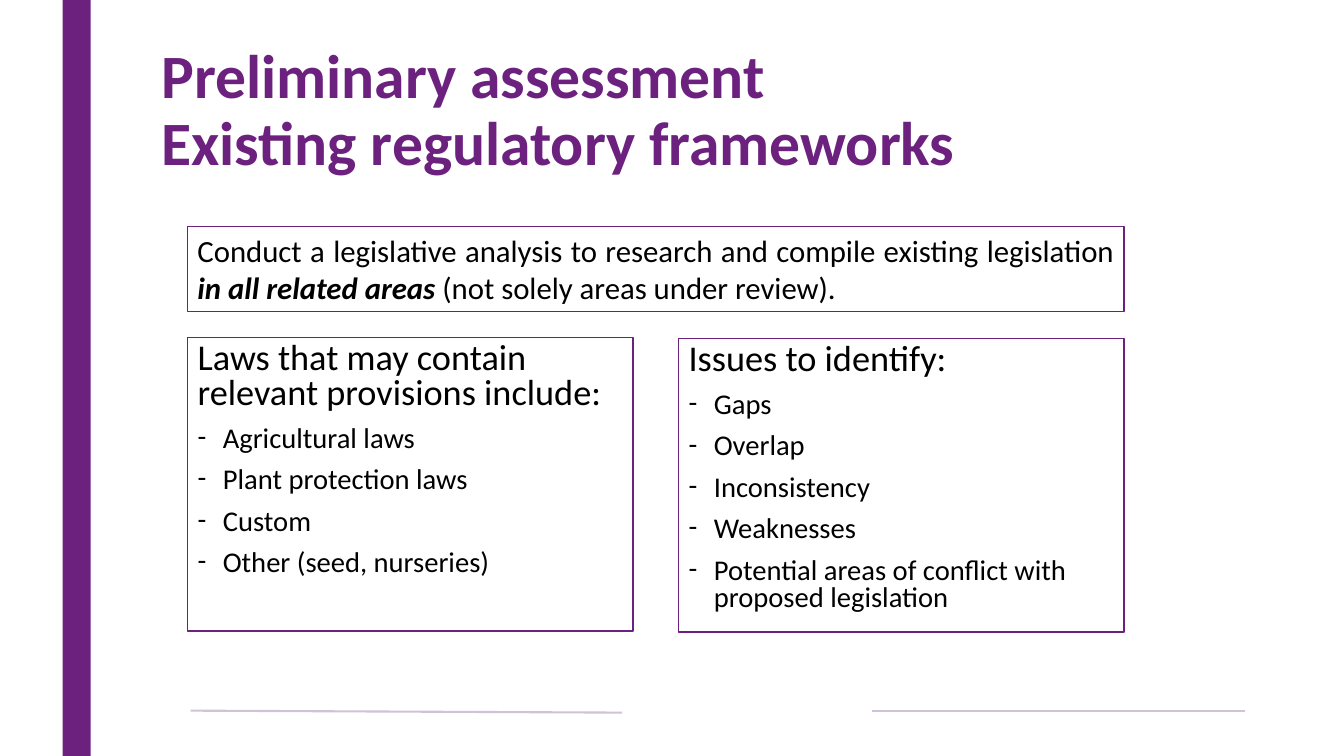
from lxml import etree
from pptx import Presentation
from pptx.dml.color import RGBColor
from pptx.enum.shapes import MSO_CONNECTOR, MSO_SHAPE
from pptx.enum.text import MSO_ANCHOR, MSO_AUTO_SIZE, PP_ALIGN
from pptx.oxml.ns import qn
from pptx.util import Inches, Pt

STRAIGHT = MSO_CONNECTOR.STRAIGHT
RECTANGLE = MSO_SHAPE.RECTANGLE
TOP = MSO_ANCHOR.TOP
NO_FIT = MSO_AUTO_SIZE.NONE
LEFT, JUSTIFY = PP_ALIGN.LEFT, PP_ALIGN.JUSTIFY

PURPLE = RGBColor(0x6C, 0x21, 0x7F)
LILAC = RGBColor(0xCF, 0xC2, 0xD9)
WHITE = RGBColor(0xFF, 0xFF, 0xFF)
BLACK = RGBColor(0x00, 0x00, 0x00)
FONT = "Calibri"

TWO_CONTENT_LAYOUT = 3
LAWS = [
    "Laws that may contain relevant provisions include:",
    "Agricultural laws",
    "Plant protection laws",
    "Custom",
    "Other (seed, nurseries)",
]
ISSUES = [
    "Issues to identify:",
    "Gaps",
    "Overlap",
    "Inconsistency",
    "Weaknesses",
    "Potential areas of conflict with proposed legislation",
]
ANALYSIS = [
    ("Conduct a legislative analysis to research and compile existing legislation ", False),
    ("in all related areas ", True),
    ("(not solely areas under review).", False),
]


def place(shape, left, top, width, height):
    shape.left, shape.top = Inches(left), Inches(top)
    shape.width, shape.height = Inches(width), Inches(height)


def style_font(font, size, color, bold=False):
    font.name = FONT
    font.size = Pt(size)
    font.bold = bold
    font.color.rgb = color


def style_frame(box):
    box.fill.solid()
    box.fill.fore_color.rgb = WHITE
    box.line.color.rgb = PURPLE
    box.line.width = Pt(1)
    frame = box.text_frame
    frame.word_wrap = True
    frame.auto_size = NO_FIT
    frame.vertical_anchor = TOP


def set_bullet(para, mark):
    properties = para._p.get_or_add_pPr()
    indent = Inches(0.25) if mark else 0
    properties.set("marL", str(indent))
    properties.set("indent", str(-indent))
    if mark:
        etree.SubElement(properties, qn("a:buFont")).set("typeface", FONT)
        etree.SubElement(properties, qn("a:buChar")).set("char", mark)
    else:
        etree.SubElement(properties, qn("a:buNone"))


def add_side_bar(page):
    bar = page.shapes.add_shape(RECTANGLE, Inches(0.62), 0, Inches(0.28), Inches(7.5))
    bar.shadow.inherit = False
    bar.fill.solid()
    bar.fill.fore_color.rgb = PURPLE
    bar.line.fill.background()


def add_rule(page, start_x, start_y, end_x, end_y):
    rule = page.shapes.add_connector(
        STRAIGHT, Inches(start_x), Inches(start_y), Inches(end_x), Inches(end_y))
    rule.line.color.rgb = LILAC
    rule.line.width = Pt(1.5)
    etree.SubElement(rule._element.spPr, qn("a:effectLst"))


def fill_title(title):
    place(title, 1.5, 0.4, 10, 1.57)
    title.fill.solid()
    title.fill.fore_color.rgb = WHITE
    white = title._element.spPr.find(".//" + qn("a:srgbClr"))
    etree.SubElement(white, qn("a:alpha")).set("val", "60000")
    frame = title.text_frame
    frame.text = "Preliminary assessment\vExisting regulatory frameworks"
    frame.auto_size = NO_FIT
    frame.vertical_anchor = TOP
    para = frame.paragraphs[0]
    para.alignment = LEFT
    para.line_spacing = 0.9
    style_font(para.font, 44, PURPLE, bold=True)


def fill_list(body, left, top, lines):
    place(body, left, top, 4.42, 2.91)
    style_frame(body)
    body.text_frame.text = "\n".join(lines)
    for number, para in enumerate(body.text_frame.paragraphs):
        set_bullet(para, "-" if number else None)
        para.line_spacing = 0.8
        para.space_before = Pt(0)
        para.space_after = Pt(10)
        style_font(para.font, 20.4 if number else 25.9, BLACK)


def add_analysis(page):
    box = page.shapes.add_textbox(Inches(1.86), Inches(2.25), Inches(9.29), Inches(0.84))
    style_frame(box)
    para = box.text_frame.paragraphs[0]
    para.alignment = JUSTIFY
    for text, stressed in ANALYSIS:
        span = para.add_run()
        span.text = text
        style_font(span.font, 22, BLACK, bold=stressed)
        span.font.italic = stressed


def main():
    deck = Presentation()
    deck.slide_width, deck.slide_height = Inches(13.33), Inches(7.5)
    page = deck.slides.add_slide(deck.slide_layouts[TWO_CONTENT_LAYOUT])
    title, laws, issues = page.placeholders
    add_side_bar(page)
    add_rule(page, 6.17, 7.07, 1.89, 7.05)
    add_rule(page, 8.65, 7.05, 12.35, 7.05)
    fill_title(title)
    fill_list(laws, 1.86, 3.35, LAWS)
    fill_list(issues, 6.73, 3.36, ISSUES)
    add_analysis(page)
    deck.save("out.pptx")


if __name__ == "__main__":
    main()
